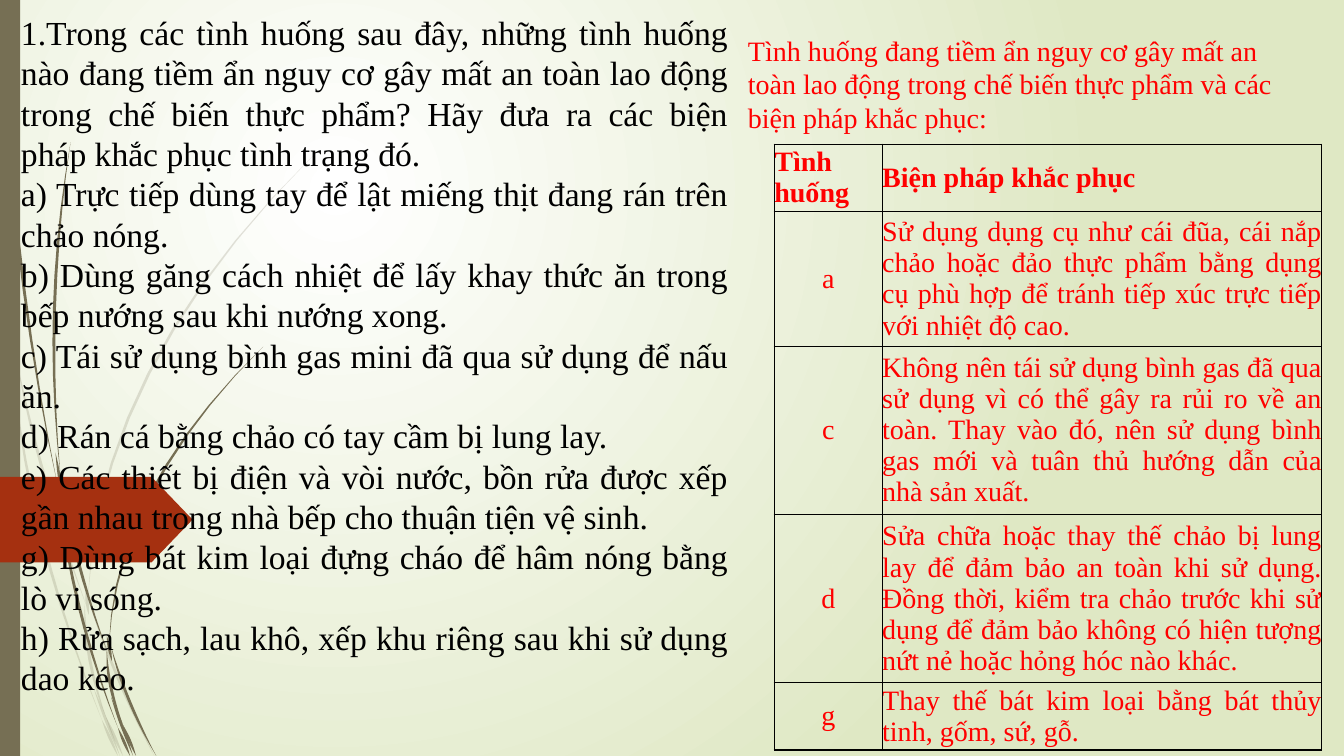
import math
from dataclasses import dataclass
from typing import Optional

from lxml import etree
from pptx import Presentation
from pptx.dml import color
from pptx.enum import shapes, text
from pptx.oxml import ns
from pptx.util import Inches, Pt

FONT = "Times New Roman"
COLORS = {
    "olive": "766F54", "rust": "A53010", "white": "FFFFFF",
    "meadow": "DFE8C4", "black": "000000", "red": "FF0000",
}
BLADE_WIDTH = 0.03
BLADE_STEPS = 10
Point = tuple[float, float]


@dataclass
class Blade:
    """A tapered blade of grass from root to tip, pulled towards bend."""
    root: Point
    tip: Point
    bend: Optional[Point] = None


@dataclass
class Stalk:
    blades: list[Blade]
    alpha: int


@dataclass
class Passage:
    left: float
    top: float
    width: float
    height: float
    paragraphs: list[str]
    size: int
    ink: str
    align: text.PP_ALIGN


FAINT_STALK = Stalk(alpha=20, blades=[
    Blade((0, 2.9), (0.11, 3.5)),
    Blade((0.14, 3.45), (0.85, 5.99), (0.37, 4.68)),
    Blade((0.88, 5.96), (1.53, 7.5), (1.15, 6.76)),
    Blade((1.05, 7.11), (1.22, 7.5)),
    Blade((0.11, 3.5), (1.01, 7.14), (0.26, 5.28)),
    Blade((0.84, 5.99), (1.05, 7.11), (0.84, 6.55)),
    Blade((0.87, 5.96), (3.12, 1.53), (0.96, 3.66)),
    Blade((1.01, 7.14), (1.17, 7.5)),
    Blade((0.85, 5.86), (0.88, 6.1)),
    Blade((0.93, 6.83), (1.19, 7.5)),
])
SOLID_STALK = Stalk(alpha=100, blades=[
    Blade((0.04, 0), (0.57, 4.81), (0.06, 2.4)),
    Blade((0.6, 4.72), (1.06, 6.45), (0.73, 5.58)),
    Blade((1.1, 6.41), (1.55, 7.5), (1.24, 6.95)),
    Blade((0.57, 4.77), (1.17, 7.22), (0.69, 6)),
    Blade((0.7, 1.41), (0.6, 4.72), (0.43, 3.06)),
    Blade((1.22, 7.19), (1.35, 7.5)),
    Blade((0.55, 4.49), (0.64, 5.05)),
    Blade((1.08, 6.41), (2.61, 3.44), (1.14, 4.88)),
    Blade((1.17, 7.22), (1.29, 7.5)),
    Blade((1.06, 6.45), (1.22, 7.19), (1.06, 6.82)),
    Blade((1.06, 6.31), (1.11, 6.56)),
    Blade((1.1, 6.91), (1.32, 7.5)),
])

QUESTION = Passage(0.11, 0.07, 7.21, 6.97, [
    "1.Trong các tình huống sau đây, những tình huống nào đang tiềm ẩn nguy cơ gây mất an toàn lao động trong chế biến thực phẩm? Hãy đưa ra các biện pháp khắc phục tình trạng đó.",
    "a) Trực tiếp dùng tay để lật miếng thịt đang rán trên chảo nóng.",
    "b) Dùng găng cách nhiệt để lấy khay thức ăn trong bếp nướng sau khi nướng xong.",
    "c) Tái sử dụng bình gas mini đã qua sử dụng để nấu ăn.",
    "d) Rán cá bằng chảo có tay cầm bị lung lay.",
    "e) Các thiết bị điện và vòi nước, bồn rửa được xếp gần nhau trong nhà bếp cho thuận tiện vệ sinh.",
    "g) Dùng bát kim loại đựng cháo để hâm nóng bằng lò vi sóng.",
    "h) Rửa sạch, lau khô, xếp khu riêng sau khi sử dụng dao kéo.",
], 24, "black", text.PP_ALIGN.JUSTIFY)
ANSWER = Passage(7.32, 0.28, 5.8, 1.11, [
    "Tình huống đang tiềm ẩn nguy cơ gây mất an toàn lao động trong chế biến thực phẩm và các biện pháp khắc phục:",
], 20, "red", text.PP_ALIGN.LEFT)

REMEDIES = [
    ("Tình huống", "Biện pháp khắc phục"),
    ("a", "Sử dụng dụng cụ như cái đũa, cái nắp chảo hoặc đảo thực phẩm bằng dụng cụ phù hợp để tránh tiếp xúc trực tiếp với nhiệt độ cao."),
    ("c", "Không nên tái sử dụng bình gas đã qua sử dụng vì có thể gây ra rủi ro về an toàn. Thay vào đó, nên sử dụng bình gas mới và tuân thủ hướng dẫn của nhà sản xuất."),
    ("d", "Sửa chữa hoặc thay thế chảo bị lung lay để đảm bảo an toàn khi sử dụng. Đồng thời, kiểm tra chảo trước khi sử dụng để đảm bảo không có hiện tượng nứt nẻ hoặc hỏng hóc nào khác."),
    ("g", "Thay thế bát kim loại bằng bát thủy tinh, gốm, sứ, gỗ."),
]
COLUMN_WIDTHS = [1.07, 4.36]
ROW_HEIGHTS = [0.67, 1.33, 1.67, 1.67, 0.66]


def rgb(name: str) -> color.RGBColor:
    return color.RGBColor.from_string(COLORS[name])


def paint(shape, name: str, alpha: int = 100) -> None:
    shape.shadow.inherit = False
    shape.line.fill.background()
    shape.fill.solid()
    shape.fill.fore_color.rgb = rgb(name)
    if alpha < 100:
        tint = shape.fill._xPr.find(".//" + ns.qn("a:srgbClr"))
        etree.SubElement(tint, ns.qn("a:alpha"), val=str(alpha * 1000))


def draw_blade(canvas, blade: Blade, alpha: int) -> None:
    middle = tuple((a + b) / 2 for a, b in zip(blade.root, blade.tip))
    left_edge, right_edge = [], []
    for step in range(BLADE_STEPS + 1):
        t = step / BLADE_STEPS
        x, y = ((1 - t) ** 2 * a + 2 * t * (1 - t) * b + t ** 2 * c
                for a, b, c in zip(blade.root, blade.bend or middle, blade.tip))
        half = BLADE_WIDTH / 2 * math.sin(math.pi * t)
        left_edge.append((Inches(x - half), Inches(y)))
        right_edge.append((Inches(x + half), Inches(y)))
    builder = canvas.build_freeform(*left_edge[0])
    builder.add_line_segments(left_edge[1:] + right_edge[-2:0:-1], close=True)
    paint(builder.convert_to_shape(), "olive", alpha)


def style_paragraph(paragraph, size: int, ink: str, align: text.PP_ALIGN, bold: bool = False) -> None:
    paragraph.alignment = align
    paragraph.font.name, paragraph.font.size = FONT, Pt(size)
    paragraph.font.bold = bold
    paragraph.font.color.rgb = rgb(ink)


def draw_passage(canvas, passage: Passage) -> None:
    box = canvas.add_textbox(*map(Inches, (passage.left, passage.top, passage.width, passage.height)))
    frame = box.text_frame
    frame.word_wrap = True
    frame.auto_size = text.MSO_AUTO_SIZE.SHAPE_TO_FIT_TEXT
    frame.text = "\n".join(passage.paragraphs)
    for paragraph in frame.paragraphs:
        style_paragraph(paragraph, passage.size, passage.ink, passage.align)


def border_cell(cell) -> None:
    properties = cell._tc.get_or_add_tcPr()
    for index, side in enumerate(("lnL", "lnR", "lnT", "lnB")):
        edge = etree.Element(ns.qn("a:" + side), w=str(Pt(1)))
        fill = etree.SubElement(edge, ns.qn("a:solidFill"))
        etree.SubElement(fill, ns.qn("a:srgbClr"), val=COLORS["black"])
        properties.insert(index, edge)


def draw_remedies(canvas) -> None:
    remedies = canvas.add_table(len(REMEDIES), 2, Inches(7.68), Inches(1.43),
                                Inches(sum(COLUMN_WIDTHS)), Inches(sum(ROW_HEIGHTS))).table
    remedies.first_row = remedies.horz_banding = False
    for column, width in zip(remedies.columns, COLUMN_WIDTHS):
        column.width = Inches(width)
    for r, (row, height) in enumerate(zip(remedies.rows, ROW_HEIGHTS)):
        row.height = Inches(height)
        for c, cell in enumerate(row.cells):
            cell.text = REMEDIES[r][c]
            cell.margin_left = cell.margin_right = cell.margin_top = cell.margin_bottom = 0
            cell.vertical_anchor = text.MSO_ANCHOR.MIDDLE
            align = text.PP_ALIGN.CENTER if r and not c else text.PP_ALIGN.JUSTIFY
            style_paragraph(cell.text_frame.paragraphs[0], 20, "red", align, bold=r == 0)
            cell.fill.background()
            border_cell(cell)


def draw_background(slide) -> None:
    fill = slide.background.fill
    fill.gradient()
    for stop, position, name in zip(fill.gradient_stops, (0, 1), ("white", "meadow")):
        stop.position = position
        stop.color.rgb = rgb(name)
    linear = slide.background._cSld.find(".//" + ns.qn("a:lin"))
    glow = etree.Element(ns.qn("a:path"), path="circle")
    etree.SubElement(glow, ns.qn("a:fillToRect"), l="50000", t="50000", r="100000", b="100000")
    linear.getparent().replace(linear, glow)


def main() -> None:
    deck = Presentation()
    deck.slide_width, deck.slide_height = Inches(13.33), Inches(7.5)
    slide = deck.slides.add_slide(deck.slide_layouts[6])
    draw_background(slide)
    # Grass, side bar and arrow
    for stalk in (FAINT_STALK, SOLID_STALK):
        group = slide.shapes.add_group_shape()
        for blade in stalk.blades:
            draw_blade(group.shapes, blade, stalk.alpha)
    side_bar = slide.shapes.add_shape(shapes.MSO_SHAPE.RECTANGLE, 0, 0, Inches(0.2), Inches(7.5))
    paint(side_bar, "olive")
    arrow = slide.shapes.add_shape(shapes.MSO_SHAPE.PENTAGON, 0, Inches(4.73), Inches(1.91), Inches(0.85))
    arrow.adjustments[0] = 0.48
    paint(arrow, "rust")
    # Question, answer and table of remedies
    draw_passage(slide.shapes, QUESTION)
    draw_passage(slide.shapes, ANSWER)
    draw_remedies(slide.shapes)
    deck.save("out.pptx")


if __name__ == "__main__":
    main()
